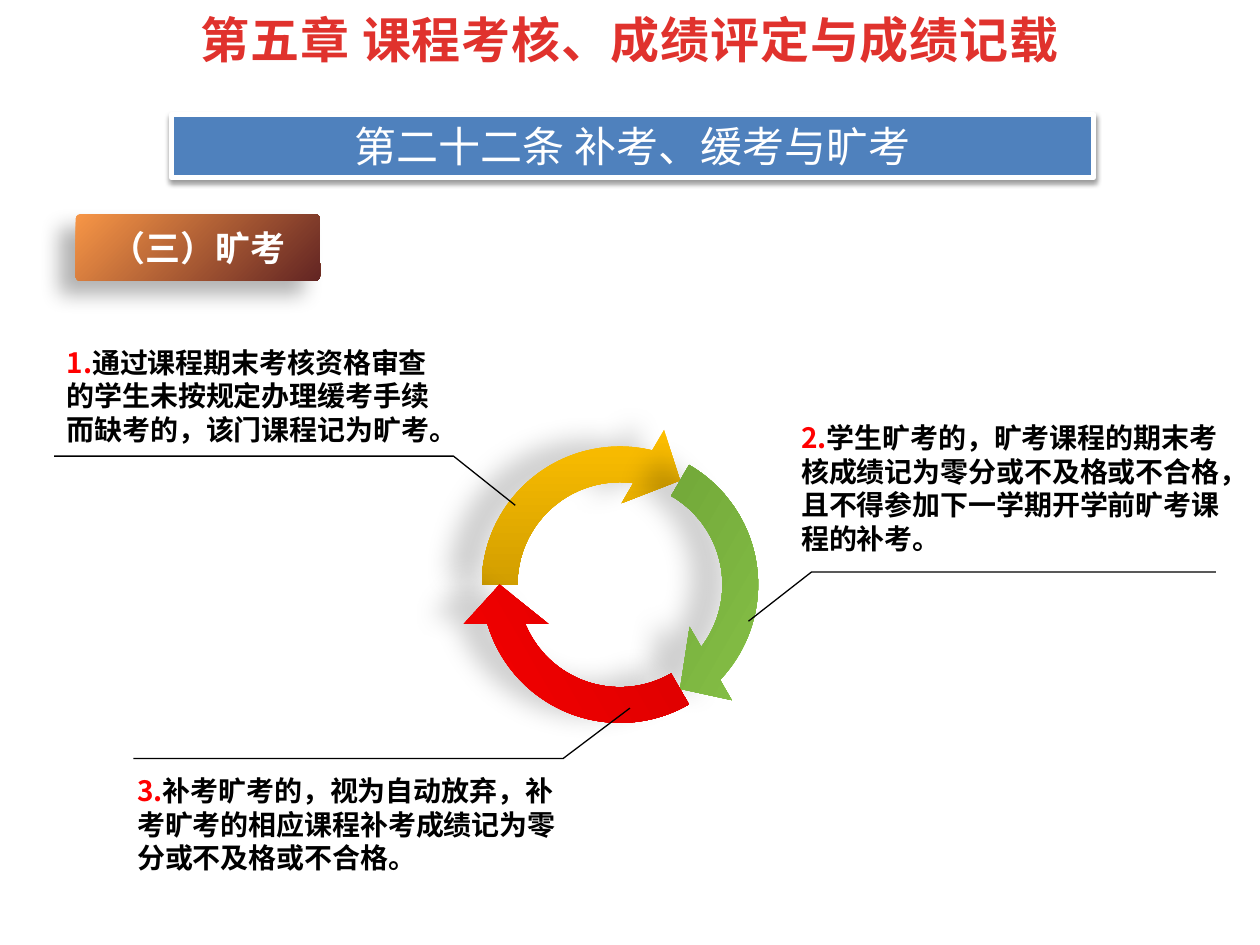
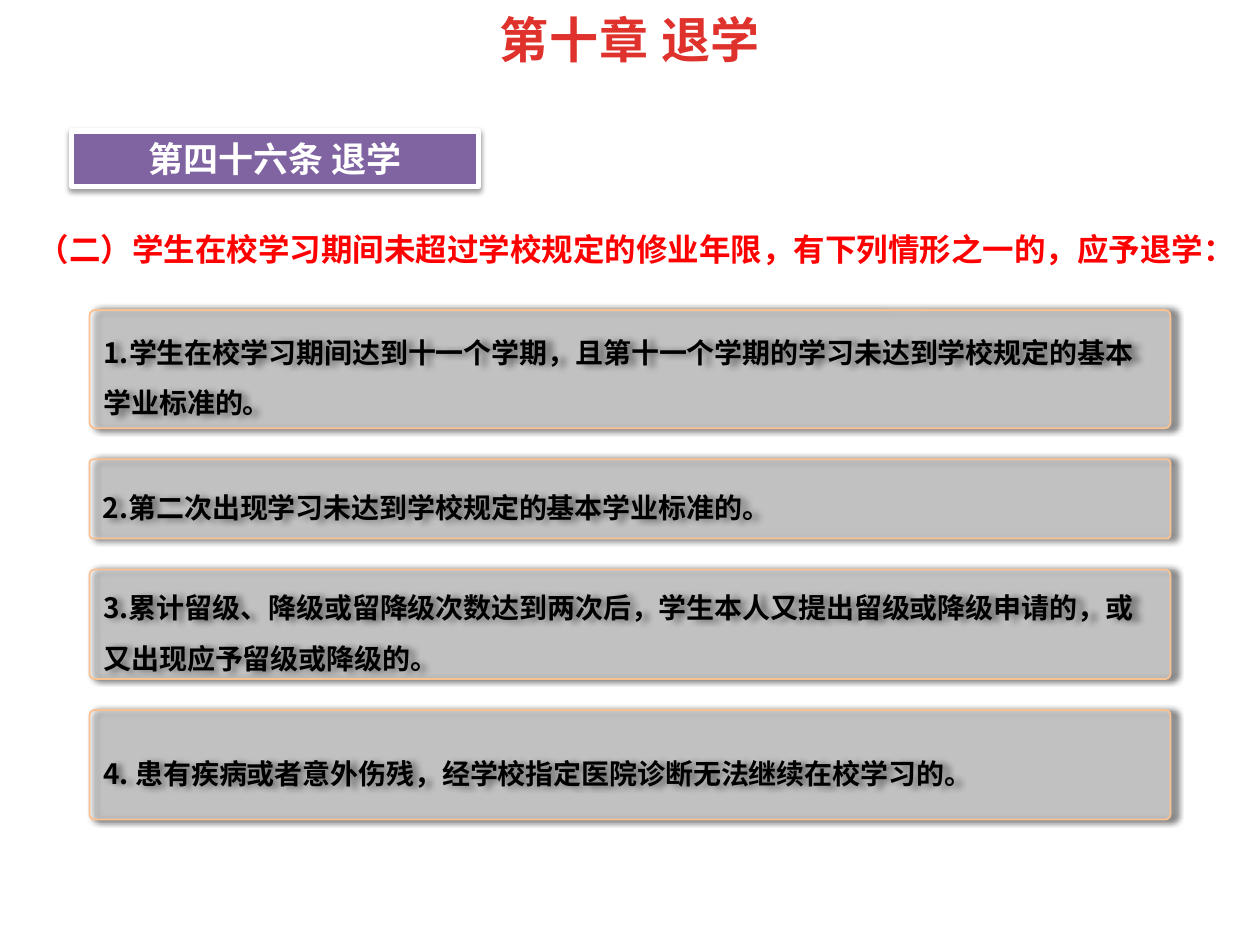
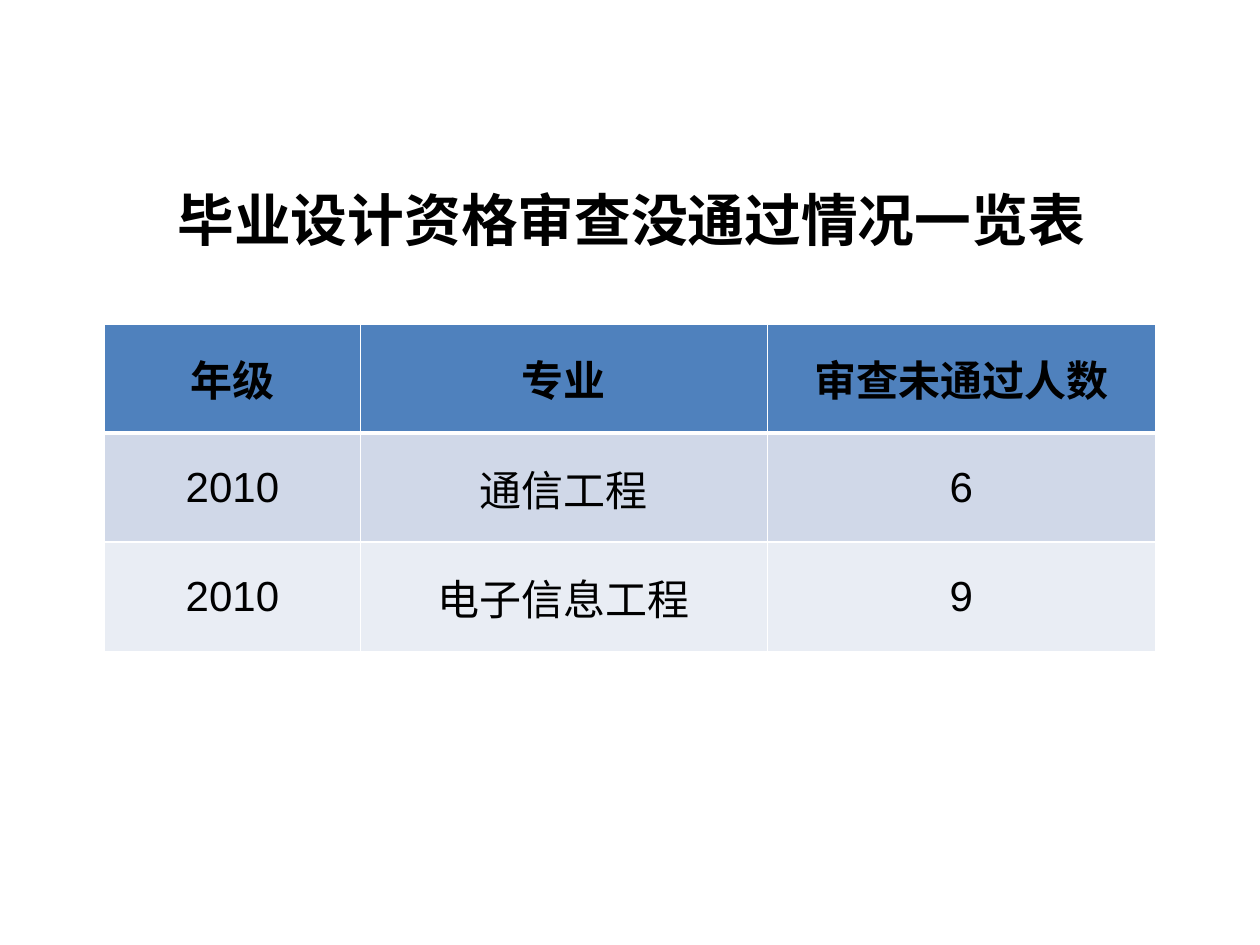
from lxml import etree
from pptx import Presentation
from pptx import util as u
from pptx.dml.color import RGBColor
from pptx.enum import shapes, text
from pptx.oxml.ns import qn

COLORS = {
    "chapter": "E0322D", "white": "FFFFFF", "black": "000000", "red": "FF0000",
    "blue": "4F81BD", "purple": "8064A2", "orange": "F79646", "maroon": "632523",
    "peach": "FAC090", "gold": "FFC000", "bronze": "A27B00", "lime": "92D050",
    "forest": "548123", "crimson": "C00000", "band_dark": "D0D8E8", "band_light": "E9EDF4",
}
CJK = "Noto Sans CJK SC"
GRID = u.Inches(0.1)  # the slide is 100 columns by 75 rows
CENTER = text.PP_ALIGN.CENTER
# Shadows: opacity %, blur pt, distance pt, direction in degrees
BANNER_SHADOW = (38, 3.1, 1.6, 90)
TAG_SHADOW = (30, 12, 12, 140)
CYCLE_SHADOW = (18, 14.5, 19, 192)
CARD_SHADOW = (40, 4, 3, 0)


def rgb(color):
    return RGBColor.from_string(COLORS[color])


def cells(*lengths):
    return [round(length * GRID) for length in lengths]


def add_alpha(color_parent, percent):
    """Make the colour inside a solid fill or shadow partly transparent."""
    color = color_parent.find(qn("a:srgbClr"))
    etree.SubElement(color, qn("a:alpha")).set("val", str(percent * 1000))


class Deck:
    def __init__(self):
        self.prs = Presentation()
        self.prs.slide_width, self.prs.slide_height = cells(100, 75)
        self.slide = None

    def new_slide(self, chapter=None):
        self.slide = self.prs.slides.add_slide(self.prs.slide_layouts[6])
        if chapter:
            self.label((0, 0.3, 100, 5.7), chapter, 28, "chapter", align=CENTER, spacing=50)

    def set_text(self, frame, parts, size, color, bold=True, align=None, font=CJK,
                 line_spacing=None, spacing=None):
        """Fill one paragraph with (words, colour) parts, or with a plain string."""
        paragraph = frame.paragraphs[0]
        paragraph.alignment = align or text.PP_ALIGN.LEFT
        if line_spacing:
            paragraph.line_spacing = line_spacing
        style = paragraph.font
        style.size, style.bold, style.name = u.Pt(size), bold, font
        style.color.rgb = rgb(color)
        etree.SubElement(style._element, qn("a:ea")).set("typeface", CJK)
        if spacing:
            style._element.set("spc", str(spacing))
        if isinstance(parts, str):
            parts = [(parts, color)]
        for words, part_color in parts:
            run = paragraph.add_run()
            run.text = words
            if part_color != color:
                run.font.color.rgb = rgb(part_color)

    def label(self, box, parts, size, color="black", **style):
        frame = self.slide.shapes.add_textbox(*cells(*box)).text_frame
        frame.word_wrap = True
        self.set_text(frame, parts, size, color, **style)

    def shadow(self, shape, opacity, blur, distance, direction):
        effects = shape.element.spPr.find(qn("a:effectLst"))
        outer = etree.SubElement(effects, qn("a:outerShdw"), {
            "blurRad": str(u.Pt(blur)), "dist": str(u.Pt(distance)),
            "dir": str(direction * 60000), "algn": "ctr", "rotWithShape": "0"})
        etree.SubElement(outer, qn("a:srgbClr")).set("val", COLORS["black"])
        add_alpha(outer, opacity)

    def shape(self, kind, box, fill, shadow, line=None, line_width=1, adjust=(), angle=90):
        """Draw a preset shape; a pair of colours as fill makes a gradient."""
        shape = self.slide.shapes.add_shape(kind, *cells(*box))
        for index, value in enumerate(adjust):
            shape.adjustments[index] = value
        if isinstance(fill, str):
            shape.fill.solid()
            shape.fill.fore_color.rgb = rgb(fill)
        else:
            shape.fill.gradient()
            shape.fill.gradient_angle = 360 - angle
            for position, (stop, color) in enumerate(zip(shape.fill.gradient_stops, fill)):
                stop.color.rgb = rgb(color)
                stop.position = position
        if line:
            shape.line.color.rgb = rgb(line)
            shape.line.width = u.Pt(line_width)
        else:
            shape.line.fill.background()
        shape.shadow.inherit = False
        self.shadow(shape, *shadow)
        return shape

    def banner(self, box, article, fill, size, bold):
        banner = self.shape(shapes.MSO_SHAPE.RECTANGLE, box, fill, BANNER_SHADOW, "white", 3)
        self.set_text(banner.text_frame, article, size, "white", bold=bold, align=CENTER)

    def tag(self, box, heading):
        tag = self.shape(shapes.MSO_SHAPE.ROUNDED_RECTANGLE, box, ("orange", "maroon"),
                         TAG_SHADOW, adjust=[0.07], angle=45)
        self.set_text(tag.text_frame, heading, 20, "white", align=CENTER)

    def card(self, box, rule):
        card = self.shape(shapes.MSO_SHAPE.ROUNDED_RECTANGLE, box, "white", CARD_SHADOW,
                          "peach", adjust=[0.05])
        add_alpha(card.element.spPr.find(qn("a:solidFill")), 40)
        self.set_text(card.text_frame, rule, 16, "black", line_spacing=1.5)

    def cycle_arrow(self, box, rotation, fill):
        arrow = self.shape(shapes.MSO_SHAPE.CIRCULAR_ARROW, box, fill, CYCLE_SHADOW,
                           adjust=(0.11, 11.42, 168.61, 108, 0.13))
        arrow.rotation = rotation

    def leader(self, *points):
        start, *rest = [cells(*point) for point in points]
        builder = self.slide.shapes.build_freeform(*start)
        builder.add_line_segments(rest, close=False)
        leader = builder.convert_to_shape()
        leader.fill.background()
        leader.line.color.rgb = rgb("black")
        leader.line.width = u.Pt(0.75)
        leader.shadow.inherit = False

    def cell_borders(self, cell, top, bottom):
        properties = cell._tc.get_or_add_tcPr()
        for index, (side, width) in enumerate(zip("LRTB", (1, 1, top, bottom))):
            border = etree.Element(qn(f"a:ln{side}"), w=str(u.Pt(width)))
            fill = etree.SubElement(border, qn("a:solidFill"))
            etree.SubElement(fill, qn("a:srgbClr")).set("val", COLORS["white"])
            properties.insert(index, border)

    def table(self, box, widths, rows, fills):
        table = self.slide.shapes.add_table(len(rows), len(widths), *cells(*box)).table
        table.horz_banding = False
        for column, width in zip(table.columns, cells(*widths)):
            column.width = width
        for r, (row, fill) in enumerate(zip(rows, fills)):
            for c, value in enumerate(row):
                cell = table.cell(r, c)
                cell.fill.solid()
                cell.fill.fore_color.rgb = rgb(fill)
                cell.vertical_anchor = text.MSO_ANCHOR.MIDDLE
                if r and c == 1:
                    cell.margin_left = cell.margin_right = cell.margin_top = u.Inches(0.01)
                    cell.margin_bottom = 0
                self.cell_borders(cell, top=3 if r == 1 else 1, bottom=1 if r else 3)
                self.set_text(cell.text_frame, value, 24, "black", bold=r == 0,
                              align=CENTER, font="Arial")


def absence_slide(deck):
    deck.new_slide("第五章 课程考核、成绩评定与成绩记载")
    deck.banner((13.6, 9.1, 73.2, 5), "第二十二条 补考、缓考与旷考", "blue", 24, False)
    deck.tag((6, 17, 19.4, 5.3), "（三）旷考")
    cycle = [("gold", "bronze"), ("lime", "forest"), ("red", "crimson")]
    for turn, fill in enumerate(cycle):
        deck.cycle_arrow((36.3, 33.5, 25.8, 25.8), turn * 120, fill)
    deck.leader((59.4, 49.3), (64.4, 45.4), (96.5, 45.4))
    deck.leader((50, 56.2), (44.7, 60.2), (10.6, 60.2))
    deck.leader((40.9, 40.1), (36, 36.2), (4.3, 36.2))
    notes = [
        ((4.3, 26.9, 31.8, 9.1),
         "通过课程期末考核资格审查的学生未按规定办理缓考手续而缺考的，该门课程记为旷考。"),
        ((62.6, 32.9, 35.8, 11.8),
         "学生旷考的，旷考课程的期末考核成绩记为零分或不及格或不合格，"
         "且不得参加下一学期开学前旷考课程的补考。"),
        ((9.9, 60.9, 35.4, 9.1),
         "补考旷考的，视为自动放弃，补考旷考的相应课程补考成绩记为零分或不及格或不合格。"),
    ]
    for number, (box, note) in enumerate(notes, 1):
        deck.label(box, [(f"{number}.", "red"), (note, "black")], 16)


def withdrawal_slide(deck):
    deck.new_slide("第十章 退学")
    deck.banner((5.7, 10.4, 32.3, 4.4), "第四十六条 退学", "purple", 20, True)
    deck.label((2, 16.3, 96.1, 5.6),
               "（二）学生在校学习期间未超过学校规定的修业年限，有下列情形之一的，应予退学：",
               18, "red", line_spacing=1.5)
    rules = [
        (9.4, "1.学生在校学习期间达到十一个学期，且第十一个学期的学习未达到学校规定的基本学业标准的。"),
        (6.3, "2.第二次出现学习未达到学校规定的基本学业标准的。"),
        (8.7, "3.累计留级、降级或留降级次数达到两次后，学生本人又提出留级或降级申请的，"
              "或又出现应予留级或降级的。"),
        (8.7, "4. 患有疾病或者意外伤残，经学校指定医院诊断无法继续在校学习的。"),
    ]
    top, gap = 24.6, 2.45
    for height, rule in rules:
        deck.card((7.1, top, 85.8, height), rule)
        top += height + gap


def review_slide(deck):
    deck.new_slide()
    deck.label((5.1, 14.2, 90, 6.5), "毕业设计资格审查没通过情况一览表", 32.4,
               align=CENTER, font="Calibri")
    deck.table((8.3, 25.7, 83.4, 26), (20.3, 32.3, 30.8),
               [("年级", "专业", "审查未通过人数"),
                ("2010", "通信工程", "6"),
                ("2010", "电子信息工程", "9")],
               ("blue", "band_dark", "band_light"))


def main():
    deck = Deck()
    absence_slide(deck)
    withdrawal_slide(deck)
    review_slide(deck)
    deck.prs.save("out.pptx")


if __name__ == "__main__":
    main()
